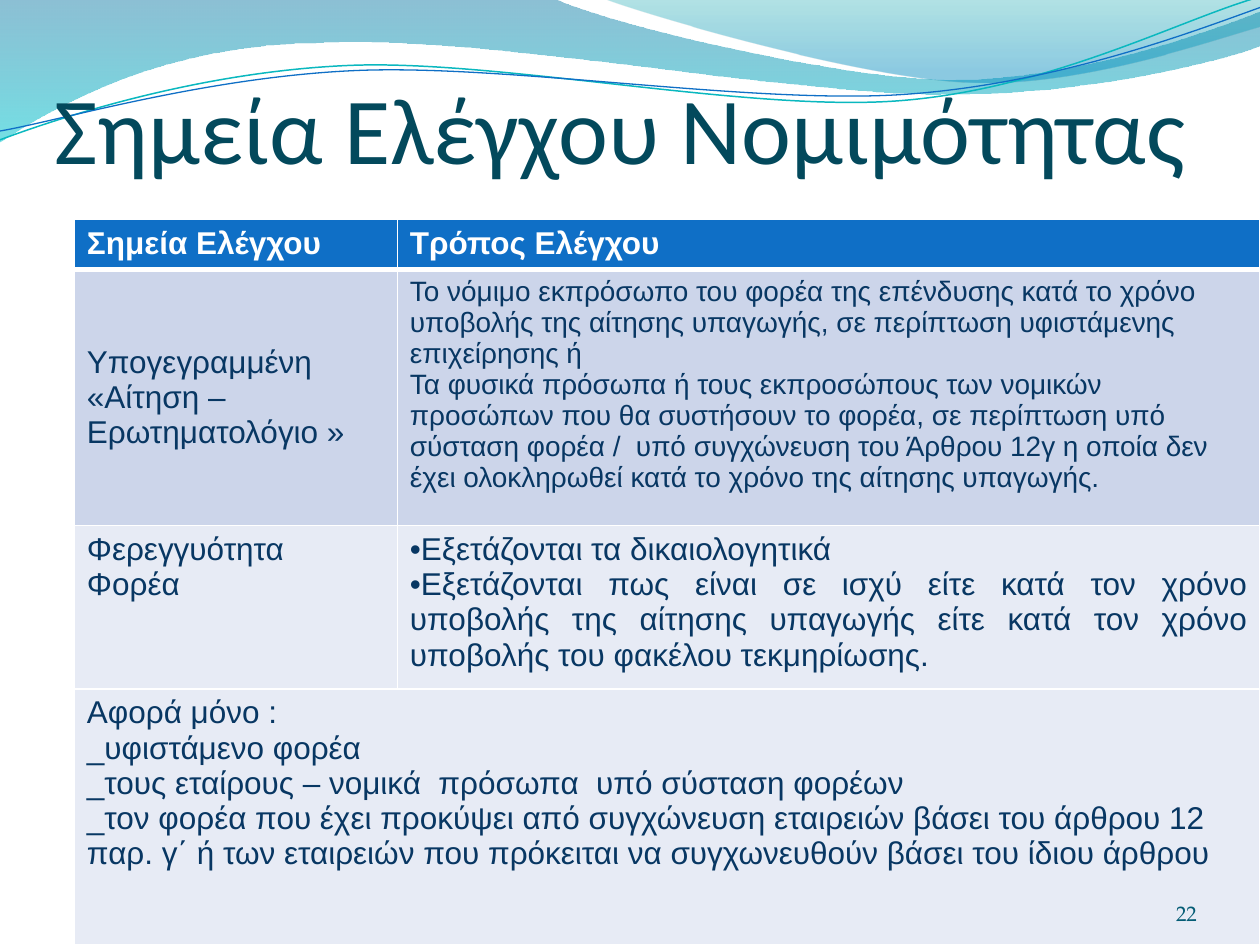
import math

from lxml import etree
from pptx import Presentation
from pptx.dml.color import RGBColor
from pptx.enum import text as t
from pptx.oxml import ns
from pptx.util import Pt


def rgb(value):
    return RGBColor.from_string(value)


def add_xml(parent, tag, **attributes):
    return etree.SubElement(parent, ns.qn(tag), attributes)


def write(frame, lines, font="Arial", size=18, color="083763", bold=False,
          align=t.PP_ALIGN.LEFT, anchor=t.MSO_ANCHOR.TOP, bullet=None):
    frame.word_wrap = True
    frame.vertical_anchor = anchor
    for index, line in enumerate(lines):
        paragraph = frame.paragraphs[0] if index == 0 else frame.add_paragraph()
        paragraph.alignment = align
        if bullet:
            properties = paragraph._p.get_or_add_pPr()
            properties.set("marL", "0")
            properties.set("indent", "0")
            add_xml(properties, "a:buFont", typeface=font)
            add_xml(properties, "a:buChar", char=bullet)
        run = paragraph.add_run()
        run.text = line
        run.font.name = font
        run.font.size = Pt(size)
        run.font.bold = bold
        run.font.color.rgb = rgb(color)


def turn(values, center, degrees):
    angle = math.radians(degrees)
    turned = []
    for x, y in zip(values[::2], values[1::2]):
        dx, dy = x - center[0], y - center[1]
        turned += [center[0] + dx * math.cos(angle) - dy * math.sin(angle),
                   center[1] + dx * math.sin(angle) + dy * math.cos(angle)]
    return tuple(turned)


class WaveSlide:
    header_fill = "0F6FC6"
    border = "FFFFFF"
    tilt = 2.7

    def __init__(self, deck):
        self.slide = deck.slides.add_slide(deck.slide_layouts[5])

    def outline(self, start, segments, close):
        points = [(Pt(x), Pt(y)) for part in segments for x, y in zip(part[::2], part[1::2])]
        builder = self.slide.shapes.build_freeform(Pt(start[0]), Pt(start[1]))
        builder.add_line_segments(points, close=close)
        curve = builder.convert_to_shape()
        curve.shadow.inherit = False
        steps = iter(list(curve.element.iter(ns.qn("a:lnTo"))))
        for part in segments:
            step = next(steps)
            if len(part) == 6:
                step.tag = ns.qn("a:cubicBezTo")
                for _ in range(2):
                    extra = next(steps)
                    step.append(extra[0])
                    extra.getparent().remove(extra)
        return curve

    def wave(self, start, segments, stops):
        wave = self.outline(start, segments, True)
        wave.line.fill.background()
        wave.fill.gradient()
        wave.fill.gradient_angle = 270
        for stop, (position, color, opacity) in zip(wave.fill.gradient_stops, stops):
            stop.position = position
            stop.color.rgb = rgb(color)
            add_xml(stop._gs[0], "a:alpha", val=str(opacity * 1000))

    def ripple(self, center, start, segments, color, width):
        start, *segments = [turn(part, center, self.tilt) for part in (start, *segments)]
        ripple = self.outline(start, segments, False)
        ripple.rotation = 360 - self.tilt
        ripple.fill.background()
        ripple.line.color.rgb = rgb(color)
        ripple.line.width = Pt(width)

    def title(self, words, left, top, width, height):
        title = self.slide.shapes.title
        self.slide.shapes.element.append(title.element)
        title.left, title.top, title.width, title.height = map(Pt, (left, top, width, height))
        frame = title.text_frame
        frame.margin_left = frame.margin_right = frame.margin_bottom = 0
        frame.margin_top = Pt(3.6)
        frame.auto_size = t.MSO_AUTO_SIZE.NONE
        write(frame, [words], font="Calibri", size=54, color="03495C", anchor=t.MSO_ANCHOR.BOTTOM)

    def page_number(self, number, left, top, width, height):
        box = self.slide.shapes.add_textbox(*map(Pt, (left, top, width, height)))
        frame = box.text_frame
        frame.margin_left = frame.margin_right = frame.margin_top = frame.margin_bottom = 0
        write(frame, [number], font="TeX Gyre Pagella", size=12, color="045C75",
              align=t.PP_ALIGN.RIGHT, anchor=t.MSO_ANCHOR.BOTTOM)

    def cell_borders(self, cell, top, bottom):
        properties = cell._tc.get_or_add_tcPr()
        for side, width in (("L", 1), ("R", 1), ("T", top), ("B", bottom)):
            line = add_xml(properties, "a:ln" + side, w=str(Pt(width)))
            add_xml(add_xml(line, "a:solidFill"), "a:srgbClr", val=self.border)

    def table(self, left, top, columns, heights, fills, rows):
        frame = self.slide.shapes.add_table(len(heights), len(columns), Pt(left), Pt(top),
                                            Pt(sum(columns)), Pt(sum(heights)))
        table = frame.table
        for column, width in zip(table.columns, columns):
            column.width = Pt(width)
        for index, (height, fill, contents) in enumerate(zip(heights, fills, rows)):
            table.rows[index].height = Pt(height)
            for column in range(len(columns)):
                cell = table.cell(index, column)
                self.cell_borders(cell, 3 if index == 1 else 1, 3 if index == 0 else 1)
                cell.fill.solid()
                cell.fill.fore_color.rgb = rgb(fill)
            for column, (lines, style) in enumerate(contents):
                cell = table.cell(index, column)
                write(cell.text_frame, lines, **style)
                cell.vertical_anchor = style.get("anchor", t.MSO_ANCHOR.TOP)
            if len(contents) == 1:
                table.cell(index, 0).merge(table.cell(index, len(columns) - 1))


def main():
    deck = Presentation()
    deck.slide_width, deck.slide_height = Pt(720), Pt(540)
    page = WaveSlide(deck)

    page.wave((0, -0.7), [
        (316.8, -0.7), (342.7, 12.2, 478.1, 45.4, 545.8, 45.4),
        (614.2, 45.4, 689.8, 18.7, 720, 6.5), (720.7, 25.9),
        (707.8, 31.7, 626.4, 54.7, 537.1, 54), (447.8, 54, 275, 20.2, 185, 24.5),
        (92.9, 25.2, 33.1, 59.8, -0.7, 81.4),
    ], [(0, "0074A1", 45), (1, "00C6CF", 55)])
    page.wave((344.9, -0.7), [
        (366.5, 7.9, 491, 44.6, 553.7, 46.8), (616.3, 49.7, 691.9, 23, 720, 15.1), (720, 0),
    ], [(0, "00A1A9", 30), (0.8, "008BBF", 45)])
    page.ripple((359.3, 41.4), (0, 79.9), [
        (34.6, 67, 113.8, 41, 199.4, 37.4), (284.4, 33.8, 427, 64.1, 513.4, 57.6),
        (599.8, 51.1, 675.4, 10.8, 718.6, -1.4),
    ], "0AB8BF", 0.85)
    page.ripple((359.6, 42.5), (0, 74.9), [
        (33.8, 69.1, 118.1, 43.9, 203.8, 40.3), (290.2, 36.7, 429.8, 59.8, 516.2, 54),
        (601.9, 48.2, 678.2, 19.4, 720, 4.3),
    ], "0F6FC6", 0.75)
    page.title("Σημεία Ελέγχου Νομιμότητας", 31, 60.5, 648, 44.6)

    header = dict(color="FFFFFF", bold=True)
    middle = dict(anchor=t.MSO_ANCHOR.MIDDLE)
    checks = dict(align=t.PP_ALIGN.JUSTIFY, bullet="•")
    page.table(42.5, 125.3, [184.6, 492.9], [28.8, 146.2, 93.4, 146.4],
               [page.header_fill, "CCD5EA", "E7EBF5", "E7EBF5"], [
        [(["Σημεία Ελέγχου"], header), (["Τρόπος Ελέγχου"], header)],
        [(["Υπογεγραμμένη  «Αίτηση – Ερωτηματολόγιο »"], middle),
         (["Το νόμιμο εκπρόσωπο του φορέα της επένδυσης κατά το χρόνο υποβολής της αίτησης "
           "υπαγωγής, σε περίπτωση υφιστάμενης επιχείρησης ή",
           "Τα φυσικά πρόσωπα ή τους εκπροσώπους των νομικών προσώπων που θα συστήσουν το φορέα, "
           "σε περίπτωση υπό σύσταση φορέα /  υπό συγχώνευση του Άρθρου 12γ η οποία δεν έχει "
           "ολοκληρωθεί κατά το χρόνο της αίτησης υπαγωγής."], dict(size=16))],
        [(["Φερεγγυότητα Φορέα"], {}),
         (["Εξετάζονται τα δικαιολογητικά ",
           "Εξετάζονται πως είναι σε ισχύ είτε κατά τον χρόνο υποβολής της αίτησης υπαγωγής "
           "είτε κατά τον χρόνο υποβολής του φακέλου τεκμηρίωσης."], checks)],
        [(["Αφορά μόνο :", "_υφιστάμενο φορέα",
           "_τους εταίρους – νομικά  πρόσωπα  υπό σύσταση φορέων",
           "_τον φορέα που έχει προκύψει από συγχώνευση εταιρειών βάσει του άρθρου 12 παρ. γ΄ "
           "ή των εταιρειών που πρόκειται να συγχωνευθούν βάσει του ίδιου άρθρου"], {})],
    ])
    page.page_number("22", 624.2, 500.4, 59.8, 28.8)
    deck.save("out.pptx")


if __name__ == "__main__":
    main()
